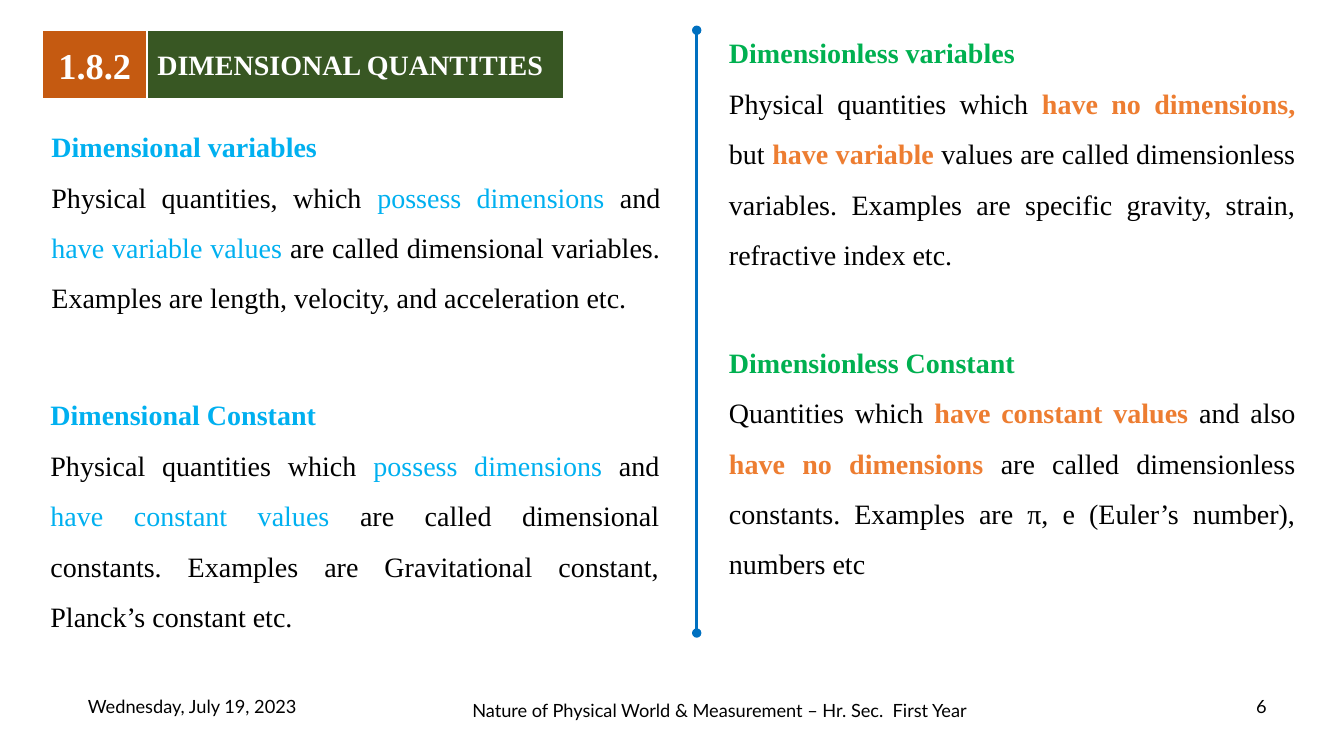
from dataclasses import dataclass

from lxml import etree
from pptx import Presentation
from pptx.dml.color import RGBColor
from pptx.enum.shapes import MSO_CONNECTOR, MSO_SHAPE
from pptx.enum.text import MSO_ANCHOR, MSO_AUTO_SIZE, PP_ALIGN
from pptx.oxml.ns import qn
from pptx.util import Inches, Pt

CENTER, LEFT, JUSTIFY = PP_ALIGN.CENTER, PP_ALIGN.LEFT, PP_ALIGN.JUSTIFY
TOP, MIDDLE = MSO_ANCHOR.TOP, MSO_ANCHOR.MIDDLE
COMPARISON_LAYOUT = 4


@dataclass(frozen=True)
class Theme:
    serif: str = "Times New Roman"
    sans: str = "Lato"
    badge_size: int = 26
    text_size: int = 20
    footer_size: int = 13
    white: str = "FFFFFF"
    black: str = "000000"
    rust: str = "C55A11"
    forest: str = "385723"
    sky: str = "00B0F0"
    green: str = "00B050"
    orange: str = "ED7D31"
    blue: str = "0070C0"


THEME = Theme()


def style_run(run, font, size, color, bold=False):
    run.font.name = font
    run.font.size = Pt(size)
    run.font.bold = bold
    run.font.color.rgb = RGBColor.from_string(color)


def place(shape, left, top, width, height, anchor):
    """Move a text shape and fix how its text sits inside."""
    shape.left, shape.top = Inches(left), Inches(top)
    shape.width, shape.height = Inches(width), Inches(height)
    shape.text_frame.word_wrap = True
    shape.text_frame.auto_size = MSO_AUTO_SIZE.NONE
    shape.text_frame.vertical_anchor = anchor


presentation = Presentation()
presentation.slide_width = Inches(13.33)
presentation.slide_height = Inches(7.5)
slide = presentation.slides.add_slide(presentation.slide_layouts[COMPARISON_LAYOUT])

# Section heading: number badge and title
section_number = slide.shapes.add_shape(MSO_SHAPE.RECTANGLE, 0, 0, 0, 0)
section_number.shadow.inherit = False
for bar, text, left, width, fill, size, align in (
    (section_number, "1.8.2", 0.42, 1.04, THEME.rust, THEME.badge_size, CENTER),
    (slide.shapes.title, "DIMENSIONAL QUANTITIES", 1.46, 4.13, THEME.forest, THEME.text_size, LEFT),
):
    place(bar, left, 0.3, width, 0.68, MIDDLE)
    bar.fill.solid()
    bar.fill.fore_color.rgb = RGBColor.from_string(fill)
    bar.line.color.rgb = RGBColor.from_string(THEME.white)
    bar.line.width = Pt(1.5)
    bar.text_frame.text = text
    label = bar.text_frame.paragraphs[0]
    label.alignment = align
    style_run(label.runs[0], THEME.serif, size, THEME.white, bold=True)

# Four definitions; every second piece of a definition is emphasised
LEFT_STYLE = (THEME.sky, THEME.sky, False)
RIGHT_STYLE = (THEME.green, THEME.orange, True)
definitions = (
    (1, (0.41, 1.07, 6.24), LEFT_STYLE, "Dimensional variables", (
        "Physical quantities, which ", "possess dimensions ", "and ", "have variable values ",
        "are called dimensional variables. Examples are length, velocity, and acceleration etc.")),
    (2, (0.4, 3.73, 6.24), LEFT_STYLE, "Dimensional Constant", (
        "Physical quantities which ", "possess dimensions ", "and ", "have constant values ",
        "are called dimensional constants. Examples are Gravitational constant, "
        "Planck’s constant etc.")),
    (3, (7.13, 0.14, 5.82), RIGHT_STYLE, "Dimensionless variables", (
        "Physical quantities which ", "have no dimensions,", " but ", "have variable ",
        "values are called dimensionless variables. Examples are specific gravity, strain, "
        "refractive index etc.")),
    (4, (7.13, 3.21, 5.82), RIGHT_STYLE, "Dimensionless Constant", (
        "Quantities which ", "have constant values ", "and also ", "have no dimensions ",
        "are called dimensionless constants. Examples are π, e (Euler’s number), numbers etc")),
)
for index, position, (term_color, key_color, key_bold), term, pieces in definitions:
    body = slide.placeholders[index]
    place(body, *position, 2.63, TOP)
    body.text_frame.text = term
    heading = body.text_frame.paragraphs[0]
    style_run(heading.runs[0], THEME.serif, THEME.text_size, term_color, bold=True)
    explanation = body.text_frame.add_paragraph()
    for number, piece in enumerate(pieces):
        run = explanation.add_run()
        run.text = piece
        is_key = number % 2 == 1
        style_run(run, THEME.serif, THEME.text_size,
                  key_color if is_key else THEME.black, is_key and key_bold)
    for paragraph in (heading, explanation):
        paragraph.alignment = JUSTIFY
        paragraph.line_spacing = 1.5
        paragraph.space_before = paragraph.space_after = Pt(0)
        properties = paragraph._p.get_or_add_pPr()
        properties.set("marL", "0")
        properties.set("indent", "0")
        etree.SubElement(properties, qn("a:buNone"))

# Divider between the columns
divider = slide.shapes.add_connector(
    MSO_CONNECTOR.STRAIGHT, Inches(6.91), Inches(0.3), Inches(6.91), Inches(6.28))
divider.line.color.rgb = RGBColor.from_string(THEME.blue)
divider.line.width = Pt(2.25)
divider_line = divider.line._get_or_add_ln()
for end in ("a:headEnd", "a:tailEnd"):
    etree.SubElement(divider_line, qn(end), type="oval")
etree.SubElement(divider._element.spPr, qn("a:effectLst"))

# Footer
for text, left, top, width in (
    ("Wednesday, July 19, 2023", 0.71, 6.81, 2.39),
    ("Nature of Physical World & Measurement – Hr. Sec.  First Year", 4.55, 6.85, 5.17),
    ("6", 12.3, 6.81, 0.42),
):
    footer = slide.shapes.add_textbox(0, 0, 0, 0)
    place(footer, left, top, width, 0.4, MIDDLE)
    footer.text_frame.text = text
    note = footer.text_frame.paragraphs[0]
    note.alignment = CENTER
    style_run(note.runs[0], THEME.sans, THEME.footer_size, THEME.black)

presentation.save("out.pptx")
